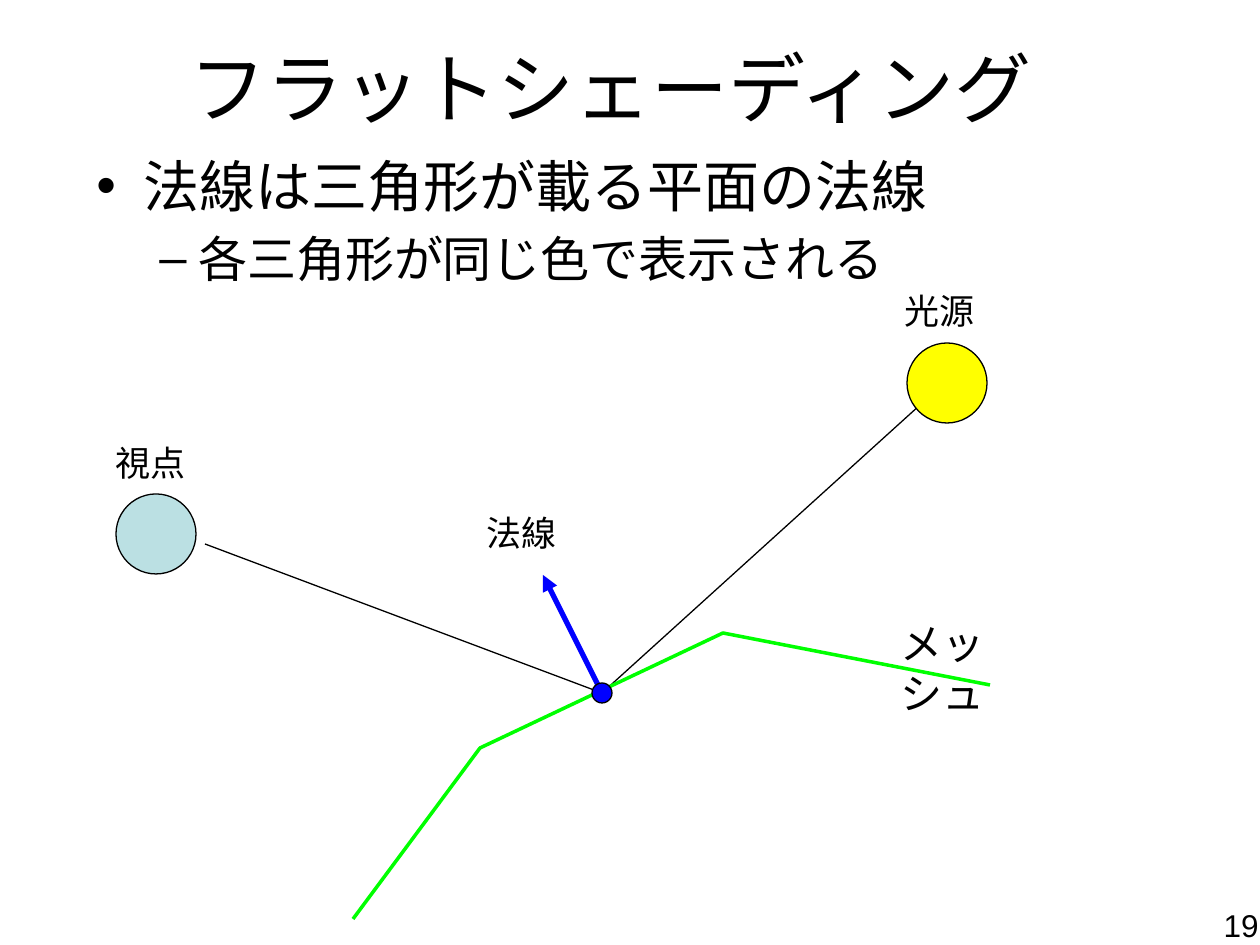
from dataclasses import dataclass

from lxml import etree
from pptx import Presentation
from pptx.dml.color import RGBColor
from pptx.enum.shapes import MSO_CONNECTOR, MSO_SHAPE
from pptx.enum.text import MSO_ANCHOR, MSO_AUTO_SIZE, PP_ALIGN
from pptx.oxml.ns import qn
from pptx.util import Pt

STRAIGHT = MSO_CONNECTOR.STRAIGHT
OVAL = MSO_SHAPE.OVAL
TOP, MIDDLE = MSO_ANCHOR.TOP, MSO_ANCHOR.MIDDLE
LEFT, CENTER, RIGHT = PP_ALIGN.LEFT, PP_ALIGN.CENTER, PP_ALIGN.RIGHT
NO_FIT = MSO_AUTO_SIZE.NONE

FONT = "Arial"
BLACK, BLUE, GREEN = "000000", "0000FF", "00FF00"
YELLOW, PALE = "FFFF00", "BBE0E3"


def px(n: int) -> int:
    return round(n * 914400 / 126)


def rgb(value: str) -> RGBColor:
    return RGBColor.from_string(value)


@dataclass
class Label:
    text: str
    x: int
    y: int
    w: int
    h: int
    size: int = 20
    align: int = LEFT
    wrap: bool = False


@dataclass
class Disc:
    cx: int
    cy: int
    d: int
    fill: str


@dataclass
class Ray:
    x: int
    y: int
    color: str = BLACK
    width: float = 0.75
    arrow: bool = False


@dataclass
class Bullet:
    text: str
    char: str
    size: int
    margin: int
    indent: int
    level: int


def place(s, x: int, y: int, w: int, h: int) -> None:
    for name, value in {"left": x, "top": y, "width": w, "height": h}.items():
        setattr(s, name, px(value))


def set_frame(tf, wrap: bool, anchor=TOP) -> None:
    values = {"word_wrap": wrap, "auto_size": NO_FIT, "vertical_anchor": anchor}
    for name, value in values.items():
        setattr(tf, name, value)


def write(p, text: str, size: int, align=LEFT) -> None:
    p.alignment = align
    r = p.add_run()
    r.text = text
    for name, value in {"name": FONT, "size": Pt(size)}.items():
        setattr(r.font, name, value)
    r.font.color.rgb = rgb(BLACK)


def set_line(line, color: str, width: float) -> None:
    line.color.rgb = rgb(color)
    line.width = Pt(width)


def add_label(slide, label: Label) -> None:
    s = slide.shapes.add_textbox(px(label.x), px(label.y), px(label.w), px(label.h))
    set_frame(s.text_frame, label.wrap)
    write(s.text_frame.paragraphs[0], label.text, label.size, label.align)


def add_bullets(slide, bullets: list[Bullet]) -> None:
    s = slide.shapes.add_textbox(px(84), px(145), px(1181), px(655))
    tf = s.text_frame
    set_frame(tf, True)
    for i, bullet in enumerate(bullets):
        p = tf.add_paragraph() if i else tf.paragraphs[0]
        p.level = bullet.level
        p.space_before = Pt(bullet.size * 0.2)
        write(p, bullet.text, bullet.size)
        pPr = p._p.get_or_add_pPr()
        pPr.set("marL", str(px(bullet.margin)))
        pPr.set("indent", str(px(bullet.indent)))
        etree.SubElement(pPr, qn("a:buFont")).set("typeface", FONT)
        etree.SubElement(pPr, qn("a:buChar")).set("char", bullet.char)


def add_disc(slide, disc: Disc) -> None:
    x, y = disc.cx - disc.d // 2, disc.cy - disc.d // 2
    s = slide.shapes.add_shape(OVAL, px(x), px(y), px(disc.d), px(disc.d))
    s.shadow.inherit = False
    s.fill.solid()
    s.fill.fore_color.rgb = rgb(disc.fill)
    set_line(s.line, BLACK, 0.75)


def add_ray(slide, origin: tuple[int, int], ray: Ray) -> None:
    s = slide.shapes.add_connector(STRAIGHT, *map(px, (*origin, ray.x, ray.y)))
    set_line(s.line, ray.color, ray.width)
    if ray.arrow:
        etree.SubElement(s.line._get_or_add_ln(), qn("a:tailEnd")).set("type", "triangle")
    etree.SubElement(s._element.spPr, qn("a:effectLst"))


def add_mesh(slide, points: list[tuple[int, int]]) -> None:
    start, *rest = [(px(x), px(y)) for x, y in points]
    builder = slide.shapes.build_freeform(*start)
    builder.add_line_segments(rest, close=False)
    s = builder.convert_to_shape()
    s.shadow.inherit = False
    s.fill.background()
    set_line(s.line, GREEN, 2)


HIT = (602, 693)
BULLETS = [
    Bullet("法線は三角形が載る平面の法線", "•", 32, 47, -47, 0),
    Bullet("各三角形が同じ色で表示される", "–", 28, 102, -39, 1),
]
RAYS = [
    Ray(543, 575, BLUE, 3, True),
    Ray(930, 396),
    Ray(205, 544),
]
MESH = [(990, 685), (723, 633), (480, 748), (353, 919)]
DISCS = [
    Disc(156, 534, 80, PALE),
    Disc(*HIT, 20, BLUE),
    Disc(947, 383, 80, YELLOW),
]
LABELS = [
    Label("19", 978, 900, 293, 65, 18, RIGHT, True),
    Label("光源", 892, 283, 96, 55),
    Label("法線", 474, 505, 96, 55),
    Label("視点", 103, 435, 96, 55),
    Label("メッシュ", 888, 611, 159, 63, 24, wrap=True),
]


def main() -> None:
    prs = Presentation()
    prs.slide_width, prs.slide_height = px(1260), px(945)
    slide = prs.slides.add_slide(prs.slide_layouts[5])
    title = slide.shapes.title
    place(title, 44, 8, 1134, 157)
    set_frame(title.text_frame, True, MIDDLE)
    write(title.text_frame.paragraphs[0], "フラットシェーディング", 44, CENTER)
    add_bullets(slide, BULLETS)
    for ray in RAYS:
        add_ray(slide, HIT, ray)
    add_mesh(slide, MESH)
    for disc in DISCS:
        add_disc(slide, disc)
    for label in LABELS:
        add_label(slide, label)
    prs.save("out.pptx")


if __name__ == "__main__":
    main()
